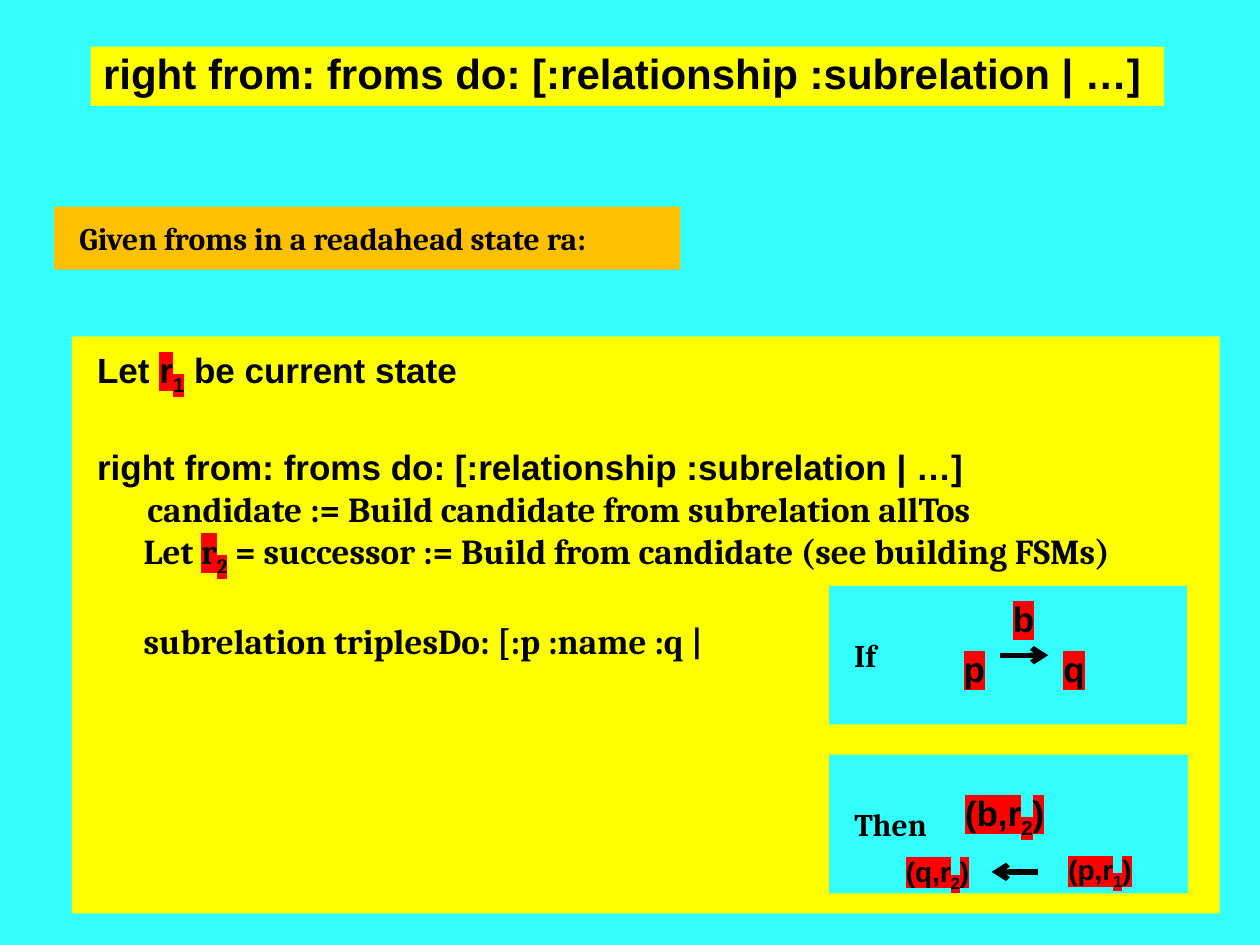
from lxml import etree
from pptx import Presentation
from pptx.dml.color import RGBColor
from pptx.enum import shapes, text
from pptx.oxml import ns
from pptx.util import Inches, Pt

COLORS = {
    "sky": "33FFFF",
    "yellow": "FFFF00",
    "amber": "FFC000",
    "red": "FF0000",
    "ink": "000000",
}
SERIF, SANS = "Cambria", "Arial"
MARK, MARK_SUB = "mark", "mark_sub"


def rgb(name):
    return RGBColor.from_string(COLORS[name])


def add_run(paragraph, words, style=None, font=SANS, size=20):
    run = paragraph.add_run()
    run.text = words
    run.font.name = font
    run.font.size = Pt(size)
    run.font.bold = True
    run.font.color.rgb = rgb("ink")
    if style:
        properties = run.font._element
        highlight = etree.Element(ns.qn("a:highlight"))
        etree.SubElement(highlight, ns.qn("a:srgbClr"), val=COLORS["red"])
        properties.find(ns.qn("a:solidFill")).addnext(highlight)
        if style == MARK_SUB:
            properties.set("baseline", "-25000")


def write(paragraph, content, font=SANS, size=20, align=text.PP_ALIGN.LEFT,
          spacing=None, before=0, indent=0, tab=None):
    paragraph.alignment = align
    paragraph.space_before = Pt(before)
    if spacing:
        paragraph.line_spacing = spacing
    properties = paragraph._p.get_or_add_pPr()
    if indent:
        properties.set("marL", str(Inches(indent)))
        properties.set("indent", "0")
    if tab:
        tabs = etree.SubElement(properties, ns.qn("a:tabLst"))
        etree.SubElement(tabs, ns.qn("a:tab"), pos=str(Inches(tab)), algn="l")
    runs = [(content, None)] if isinstance(content, str) else content
    for words, style in runs:
        add_run(paragraph, words, style, font, size)


def set_frame(frame, inset_x, inset_y, anchor, wrap=True):
    frame.margin_left = frame.margin_right = Inches(inset_x)
    frame.margin_top = frame.margin_bottom = Inches(inset_y)
    frame.vertical_anchor = anchor
    frame.word_wrap = wrap


def add_panel(slide, box, color, inset=(0.2, 0.1),
              anchor=text.MSO_ANCHOR.MIDDLE, wrap=True):
    panel = slide.shapes.add_shape(
        shapes.MSO_SHAPE.RECTANGLE, *map(Inches, box))
    panel.shadow.inherit = False
    panel.fill.solid()
    panel.fill.fore_color.rgb = rgb(color)
    panel.line.fill.background()
    set_frame(panel.text_frame, *inset, anchor, wrap)
    return panel.text_frame


def add_label(slide, box, content, anchor=text.MSO_ANCHOR.TOP, **style):
    label = slide.shapes.add_textbox(*map(Inches, box))
    set_frame(label.text_frame, 0.1, 0.05, anchor)
    write(label.text_frame.paragraphs[0], content, spacing=0.9, **style)


def add_arrow(slide, start_x, end_x, y):
    arrow = slide.shapes.add_connector(
        shapes.MSO_CONNECTOR.STRAIGHT, *map(Inches, (start_x, y, end_x, y)))
    arrow.line.color.rgb = rgb("ink")
    arrow.line.width = Pt(3)
    etree.SubElement(arrow.line._get_or_add_ln(), ns.qn("a:tailEnd"),
                     type="arrow")
    etree.SubElement(arrow._element.spPr, ns.qn("a:effectLst"))


def state_pair(first, number):
    return [(f"({first},r", MARK), (number, MARK_SUB), (")", MARK)]


def add_title(slide, box, signature):
    frame = add_panel(slide, box, "yellow", inset=(0.1, 0.05),
                      anchor=text.MSO_ANCHOR.TOP, wrap=False)
    write(frame.paragraphs[0], signature, size=24, spacing=0.9)


def add_premise(slide, box):
    frame = add_panel(slide, box, "amber")
    write(frame.paragraphs[0], "Given froms in a readahead state ra:",
          font=SERIF, size=18)


def add_algorithm(slide, box, signature):
    frame = add_panel(slide, box, "yellow", anchor=text.MSO_ANCHOR.TOP)
    steps = [
        ([("Let ", None), ("r", MARK), ("1", MARK_SUB),
          (" be current state", None)], dict(spacing=0.9)),
        (signature, dict(spacing=0.9, before=33)),
        ("candidate := Build candidate from subrelation allTos",
         dict(font=SERIF, indent=0.4)),
        ([("Let ", None), ("r", MARK), ("2", MARK_SUB),
          (" = successor := Build from candidate (see building FSMs)", None)],
         dict(font=SERIF, indent=0.37)),
        ("subrelation triplesDo: [:p :name :q |",
         dict(font=SERIF, indent=0.37, before=24)),
    ]
    for index, (content, style) in enumerate(steps):
        paragraph = frame.add_paragraph() if index else frame.paragraphs[0]
        write(paragraph, content, **style)


def add_condition(slide, box):
    left, top = box[:2]
    frame = add_panel(slide, box, "sky")
    write(frame.paragraphs[0], "If", font=SERIF, size=18)
    add_arrow(slide, left + 1.36, left + 1.74, top + 0.55)
    add_label(slide, (left + 1.36, top + 0.08, 1, 0.4), [("b", MARK)])
    add_label(slide, (left + 0.97, top + 0.48, 1.39, 0.4),
              [("p", MARK), ("\t", None), ("q", MARK)], tab=0.79)


def add_consequence(slide, box):
    left, top = box[:2]
    frame = add_panel(slide, box, "sky")
    write(frame.paragraphs[0], "Then", font=SERIF, size=18)
    add_label(slide, (left + 0.98, top + 0.25, 1, 0.4), state_pair("b", "2"))
    for x, y, first, number in ((0.41, 0.7, "q", "2"), (1.7, 0.69, "p", "1")):
        add_label(slide, (left + x, top + y, 0.9, 0.46),
                  state_pair(first, number), size=16,
                  anchor=text.MSO_ANCHOR.MIDDLE, align=text.PP_ALIGN.CENTER)
    add_arrow(slide, left + 1.66, left + 1.29, top + 0.93)


def main():
    deck = Presentation()
    deck.slide_width, deck.slide_height = Inches(10), Inches(7.5)
    slide = deck.slides.add_slide(deck.slide_layouts[6])
    slide.background.fill.solid()
    slide.background.fill.fore_color.rgb = rgb("sky")
    signature = "right from: froms do: [:relationship :subrelation | …]"
    add_title(slide, (0.72, 0.37, 8.52, 0.47), signature)
    add_premise(slide, (0.43, 1.64, 4.97, 0.5))
    add_algorithm(slide, (0.57, 2.67, 9.11, 4.58), signature)
    add_condition(slide, (6.58, 4.65, 2.84, 1.1))
    add_consequence(slide, (6.58, 5.99, 2.85, 1.1))
    deck.save("out.pptx")


if __name__ == "__main__":
    main()
